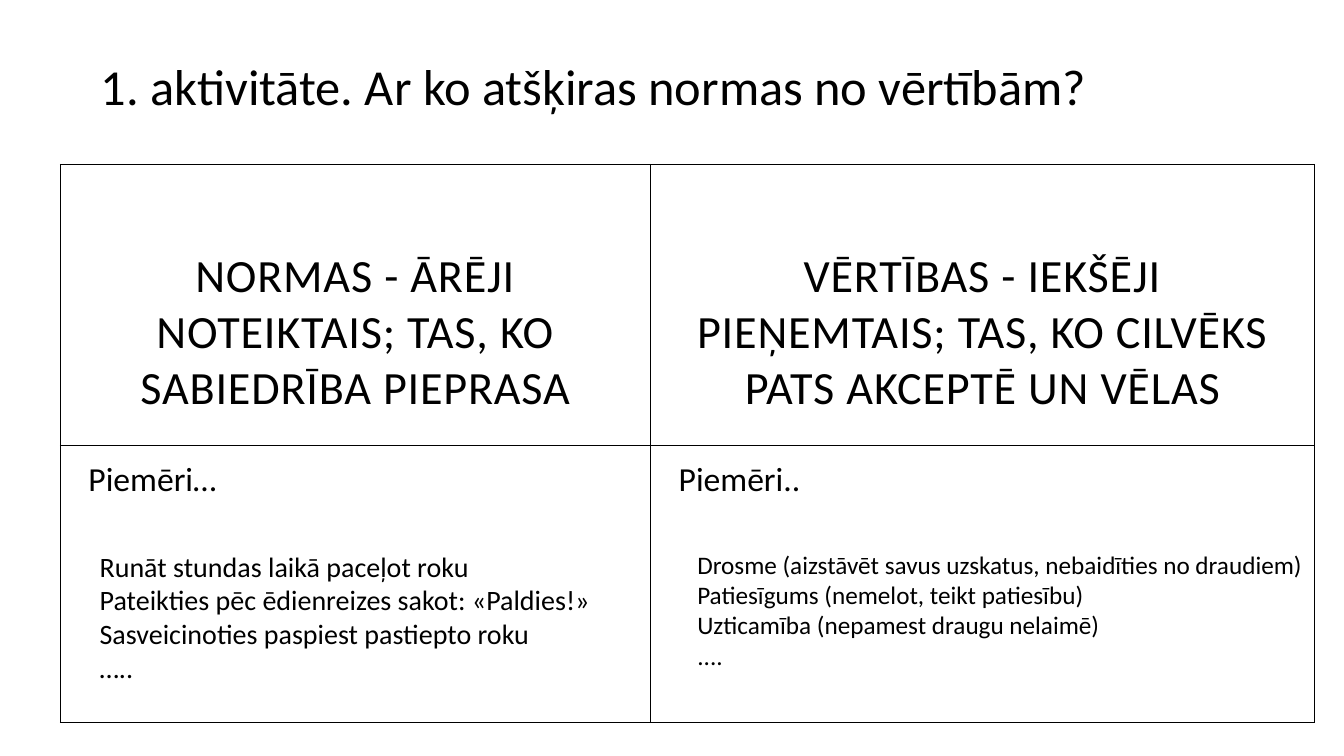
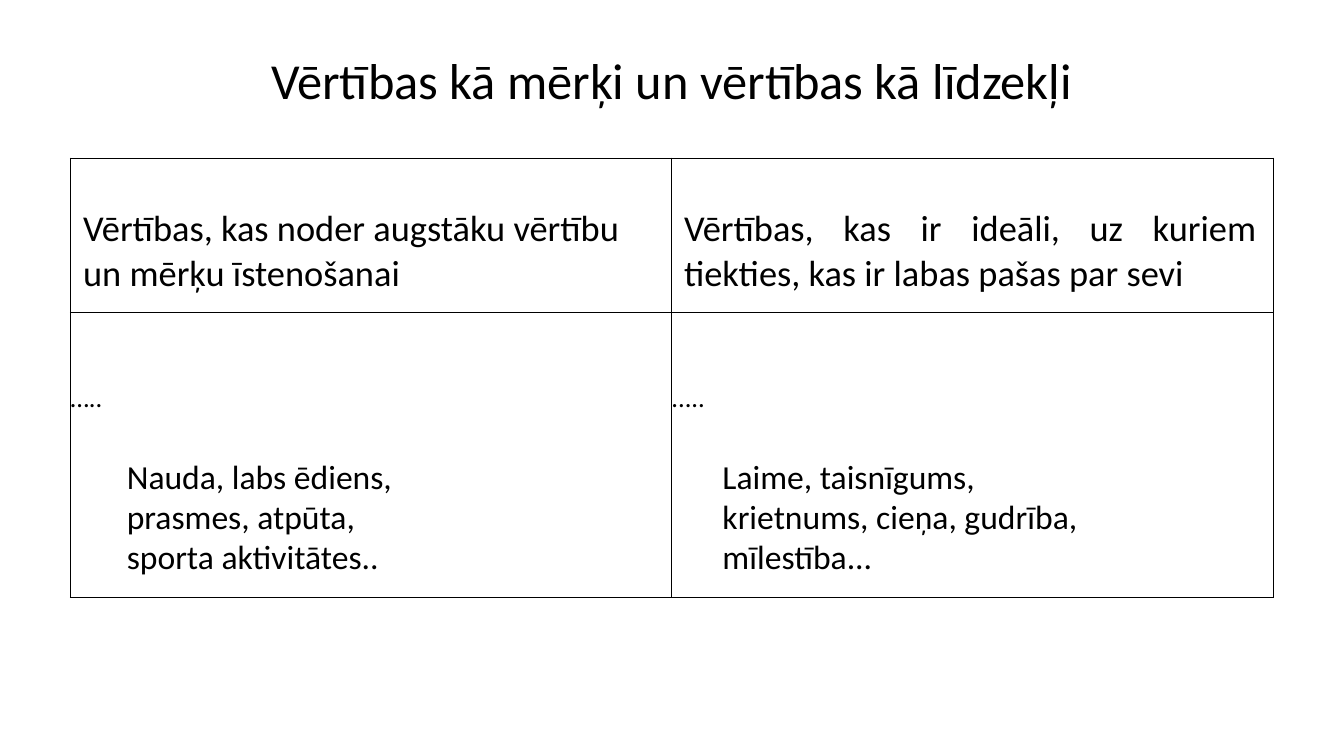
from dataclasses import dataclass

from lxml import etree
from pptx import Presentation
from pptx import util as u
from pptx.dml.color import RGBColor
from pptx.enum import text
from pptx.oxml.ns import qn

# Shared look
COLOURS = {"ink": "000000", "rule": "000000"}
FONT = "Calibri"
LEFT, CENTRE, JUSTIFY = text.PP_ALIGN.LEFT, text.PP_ALIGN.CENTER, text.PP_ALIGN.JUSTIFY
TOP, BOTTOM = text.MSO_ANCHOR.TOP, text.MSO_ANCHOR.BOTTOM
TITLE_SIZE = 36
BORDER_WIDTH = 1


@dataclass
class Box:
    left: float
    top: float
    width: float
    height: float

    def lengths(self) -> list:
        return [u.Pt(v) for v in (self.left, self.top, self.width, self.height)]


@dataclass
class Style:
    size: float
    align: int = LEFT
    spacing: float = 0


@dataclass
class RowLook:
    height: float
    style: Style
    anchor: int
    insets: tuple  # left, top, right, bottom


@dataclass
class Note:
    box: Box
    size: float
    lines: list
    right_inset: float = 7.2


def write(frame, lines: list, style: Style) -> None:
    """Put lines into a text frame, one paragraph each, and format the runs."""
    frame.text = "\n".join(lines)
    for paragraph in frame.paragraphs:
        paragraph.alignment = style.align
        for run in paragraph.runs:
            run.font.name = FONT
            run.font.size = u.Pt(style.size)
            run.font.color.rgb = RGBColor.from_string(COLOURS["ink"])
            if style.spacing:
                run.font._element.set("spc", str(round(style.spacing * 100)))


def add_title(slide, wording: str, box: Box, align: int, anchor: int, line_spacing: float) -> None:
    title = slide.shapes.title
    title.left, title.top, title.width, title.height = box.lengths()
    frame = title.text_frame
    frame.auto_size = text.MSO_AUTO_SIZE.NONE
    frame.vertical_anchor = anchor
    write(frame, [wording], Style(TITLE_SIZE, align))
    frame.paragraphs[0].line_spacing = line_spacing


def add_borders(cell) -> None:
    properties = cell._tc.get_or_add_tcPr()
    for position, side in enumerate(("lnL", "lnR", "lnT", "lnB")):
        line = etree.Element(qn(f"a:{side}"), w=str(u.Pt(BORDER_WIDTH)))
        fill = etree.SubElement(line, qn("a:solidFill"))
        etree.SubElement(fill, qn("a:srgbClr"), val=COLOURS["rule"])
        properties.insert(position, line)


def add_comparison(slide, left: float, top: float, widths: list, looks: list, wording: list) -> None:
    """Draw a ruled table; each row has its own look."""
    box = Box(left, top, sum(widths), sum(look.height for look in looks))
    table = slide.shapes.add_table(len(looks), len(widths), *box.lengths()).table
    table.first_row = table.horz_banding = False
    for column, width in zip(table.columns, widths):
        column.width = u.Pt(width)
    for row, look, row_wording in zip(table.rows, looks, wording):
        row.height = u.Pt(look.height)
        for cell, lines in zip(row.cells, row_wording):
            cell.fill.background()
            (cell.margin_left, cell.margin_top,
             cell.margin_right, cell.margin_bottom) = [u.Pt(v) for v in look.insets]
            cell.vertical_anchor = look.anchor
            write(cell.text_frame, lines, look.style)
            add_borders(cell)


def add_note(slide, note: Note) -> None:
    frame = slide.shapes.add_textbox(*note.box.lengths()).text_frame
    frame.word_wrap = True
    frame.margin_right = u.Pt(note.right_inset)
    write(frame, note.lines, Style(note.size))


def build_norms_slide(slide) -> None:
    add_title(slide, "1. aktivitāte. Ar ko atšķiras normas no vērtībām?",
              Box(64.8, 13.7, 732, 73.4), LEFT, BOTTOM, 0.9)
    add_comparison(
        slide, 43.2, 117.4, [421.6, 474.4],
        [RowLook(200.7, Style(33, CENTRE, 0.6), BOTTOM, (20, 20, 20, 20)),
         RowLook(198, Style(24), TOP, (20, 10, 20, 20))],
        [[["NORMAS - ĀRĒJI NOTEIKTAIS; TAS, KO SABIEDRĪBA PIEPRASA"],
          ["VĒRTĪBAS - IEKŠĒJI PIEŅEMTAIS; TAS, KO CILVĒKS PATS AKCEPTĒ UN VĒLAS"]],
         [["Piemēri…"], ["Piemēri.."]]])
    norm_examples = Note(Box(64.1, 388.8, 396, 128.2), 20, [
        "Runāt stundas laikā paceļot roku",
        "Pateikties pēc ēdienreizes sakot: «Paldies!»",
        "Sasveicinoties paspiest pastiepto roku",
        "….."])
    value_examples = Note(Box(491, 388.8, 452.9, 94.3), 18, [
        "Drosme (aizstāvēt savus uzskatus, nebaidīties no draudiem)",
        "Patiesīgums (nemelot, teikt patiesību)",
        "Uzticamība (nepamest draugu nelaimē)",
        "...."])
    for note in (norm_examples, value_examples):
        add_note(slide, note)


def build_values_slide(slide) -> None:
    add_title(slide, "Vērtības kā mērķi un vērtības kā līdzekļi",
              Box(71.3, 31.7, 817.2, 51.1), CENTRE, TOP, 1)
    add_comparison(
        slide, 50.4, 113, [429.2, 429.8],
        [RowLook(110, Style(26, JUSTIFY), BOTTOM, (9, 2, 11.5, 11.5)),
         RowLook(203.8, Style(19, JUSTIFY), TOP, (0, 50, 11.5, 11.5))],
        [[["Vērtības, kas noder augstāku vērtību", "un mērķu īstenošanai"],
          ["Vērtības, kas ir ideāli, uz kuriem tiekties, kas ir labas pašas par sevi"]],
         [["….."], ["....."]]])
    means = Note(Box(83.5, 321.8, 313.2, 94.3), 24,
                 ["Nauda, labs ēdiens, prasmes, atpūta, sporta aktivitātes.."], 92)
    goals = Note(Box(509, 321.8, 291.6, 94.3), 24,
                 ["Laime, taisnīgums, krietnums, cieņa, gudrība, mīlestība..."], 12)
    for note in (means, goals):
        add_note(slide, note)


def main() -> None:
    deck = Presentation()
    deck.slide_width, deck.slide_height = u.Pt(960), u.Pt(540)
    title_only = deck.slide_layouts[5]
    for build in (build_norms_slide, build_values_slide):
        build(deck.slides.add_slide(title_only))
    deck.save("out.pptx")


if __name__ == "__main__":
    main()
